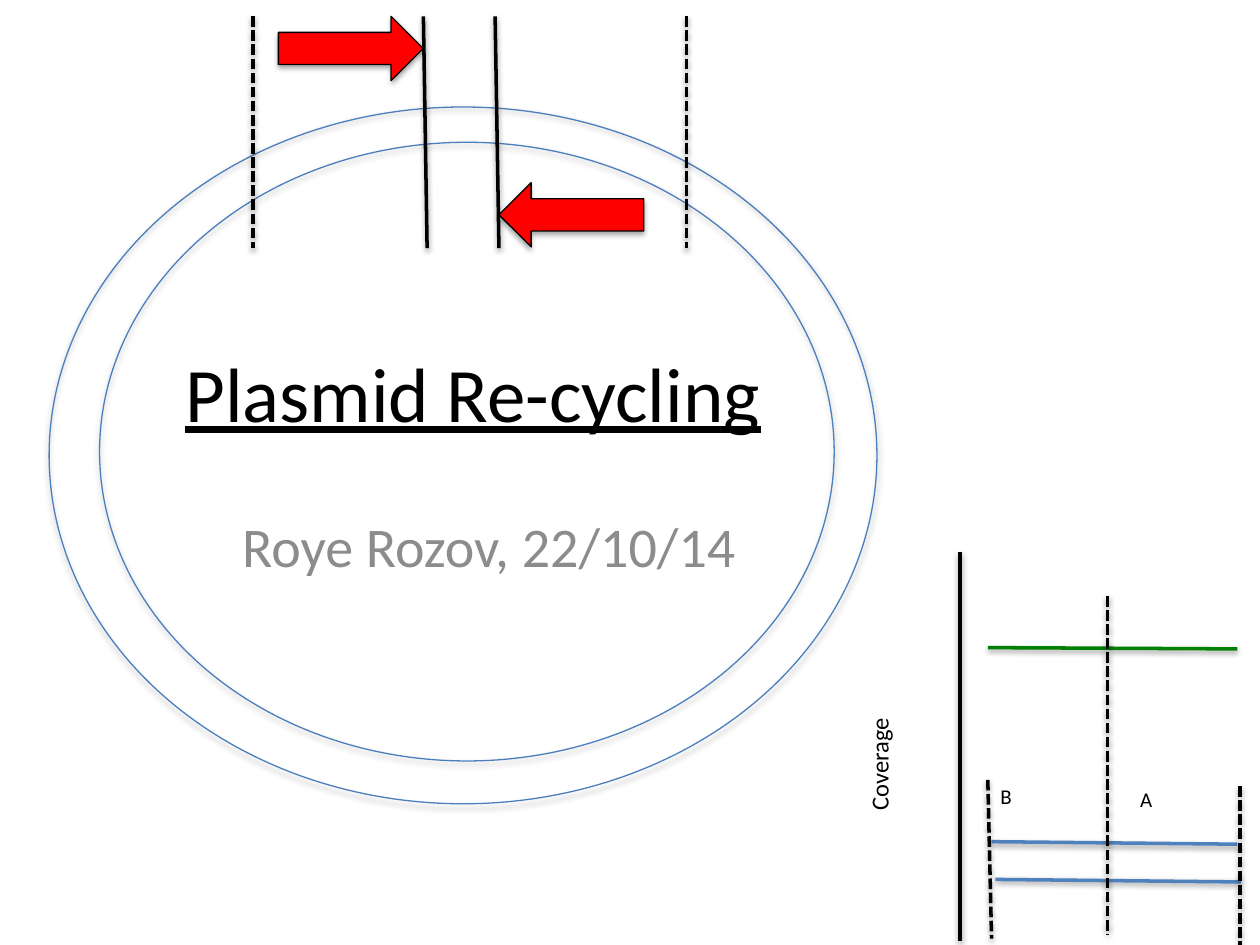
from lxml import etree
from pptx import Presentation, util as u
from pptx.dml.color import RGBColor
from pptx.enum import dml, shapes, text
from pptx.oxml import parse_xml
from pptx.oxml.ns import nsdecls, qn

WIDE, HIGH = u.Inches(10), u.Inches(7.5)
INK = {"black": "000000", "gray": "8C8C8C", "ring": "4B7EBC",
       "blue": "4F81BD", "green": "008000", "red": "FF0000"}
FONT = "Calibri"
FULL = (0, 0, WIDE, HIGH)


def tone(name):
    return RGBColor.from_string(INK[name])


def spot(box, x, y):
    """Turn percent of a box into a point on the slide."""
    left, top, wide, high = box
    return round(left + wide * x / 100), round(top + high * y / 100)


def part(box, x, y, wide, high):
    """Turn percent of a box into a smaller box."""
    return (*spot(box, x, y),
            round(box[2] * wide / 100), round(box[3] * high / 100))


def shade(item, alpha, dist):
    """Give a soft shadow that falls straight down."""
    props = item._element.spPr
    for old in props.findall(qn("a:effectLst")):
        props.remove(old)
    glow = parse_xml(
        f'<a:effectLst {nsdecls("a")}><a:outerShdw blurRad="40000" '
        f'dist="{dist}" dir="5400000" rotWithShape="0">'
        f'<a:srgbClr val="{INK["black"]}"><a:alpha val="{alpha}"/>'
        '</a:srgbClr></a:outerShdw></a:effectLst>')
    props.append(glow)


def rule(slide, box, start, end, color="black", dash=False):
    line = slide.shapes.add_connector(
        shapes.MSO_CONNECTOR.STRAIGHT, *spot(box, *start), *spot(box, *end))
    line.line.color.rgb = tone(color)
    line.line.width = u.Pt(2)
    if dash:
        line.line.dash_style = dml.MSO_LINE.SQUARE_DOT
        mark = line._element.spPr.find(".//" + qn("a:prstDash"))
        mark.set("val", "sysDash")
    shade(line, 38000, 20000)


def solid(slide, kind, area, edge, fill=None, turn=0):
    item = slide.shapes.add_shape(kind, *area)
    item.shadow.inherit = False
    item.rotation = turn
    if fill:
        item.fill.solid()
        item.fill.fore_color.rgb = tone(fill)
    else:
        item.fill.background()
    item.line.color.rgb = tone(edge)
    item.line.width = u.Pt(0.75)
    shade(item, 35000, 23000)


def label(slide, area, words, size, color="black", center=False,
          middle=False, under=None, turn=0):
    item = slide.shapes.add_textbox(*area)
    item.rotation = turn
    frame = item.text_frame
    frame.word_wrap = True
    frame.vertical_anchor = (text.MSO_ANCHOR.MIDDLE if middle
                             else text.MSO_ANCHOR.TOP)
    para = frame.paragraphs[0]
    para.alignment = text.PP_ALIGN.CENTER if center else text.PP_ALIGN.LEFT
    run = para.add_run()
    run.text = words
    font = run.font
    font.name, font.size, font.underline = FONT, u.Pt(size), under
    font.color.rgb = tone(color)


def heading(slide, box):
    label(slide, part(box, 2.43, 0, 91.57, 44.35), "Plasmid Re-cycling", 44,
          center=True, middle=True, under=True)
    label(slide, part(box, 0, 47.11, 100, 52.89), "Roye Rozov, 22/10/14", 32,
          "gray", center=True)


def plasmid(slide, box):
    """Draw the double ring with its cut marks and facing reads."""
    kinds = shapes.MSO_SHAPE
    for ring in ((0, 11.52, 100, 88.48), (6.09, 16, 88.74, 78.56)):
        solid(slide, kinds.OVAL, part(box, *ring), "ring")
    foot = 29.44
    for top, low, dash in ((45.21, 45.66, False), (53.88, 54.34, False),
                           (24.66, 24.66, True), (77.02, 77.02, True)):
        rule(slide, box, (top, 0), (low, foot), dash=dash)
    for x, y, turn in ((27.7, 0, 0), (54.34, 21.12, 180)):
        solid(slide, kinds.RIGHT_ARROW, part(box, x, y, 17.5, 8.16),
              "black", "red", turn)


def coverage(slide, box):
    """Draw the coverage sketch with its axis, levels and bounds."""
    for start, end, color in (((11.21, 73.72), (98.65, 74.36), "blue"),
                              ((12.56, 83.33), (100, 83.97), "blue"),
                              ((9.87, 24.36), (98.65, 24.68), "green"),
                              ((0, 0), (0, 99.04), "black")):
        rule(slide, box, start, end, color)
    for start, end in (((9.87, 58.01), (11.21, 98.4)),
                       ((52.47, 11.22), (52.47, 97.44)),
                       ((99.55, 59.62), (99.55, 100))):
        rule(slide, box, start, end, dash=True)
    for words, x, y in (("B", 9.87, 57.37), ("A", 59.64, 58.01)):
        label(slide, part(box, x, y, 39.91, 16.35), words, 12)
    label(slide, part(box, -70.85, 25, 95.96, 19.23), "Coverage", 14, turn=270)


def main():
    deck = Presentation()
    deck.slide_width, deck.slide_height = WIDE, HIGH
    slide = deck.slides.add_slide(deck.slide_layouts[6])
    heading(slide, part(FULL, 3.8, 30.67, 70, 48.4))
    plasmid(slide, part(FULL, 3.9, 1.73, 65.7, 83.33))
    coverage(slide, part(FULL, 76.2, 58.4, 22.3, 41.6))
    deck.save("out.pptx")


if __name__ == "__main__":
    main()
